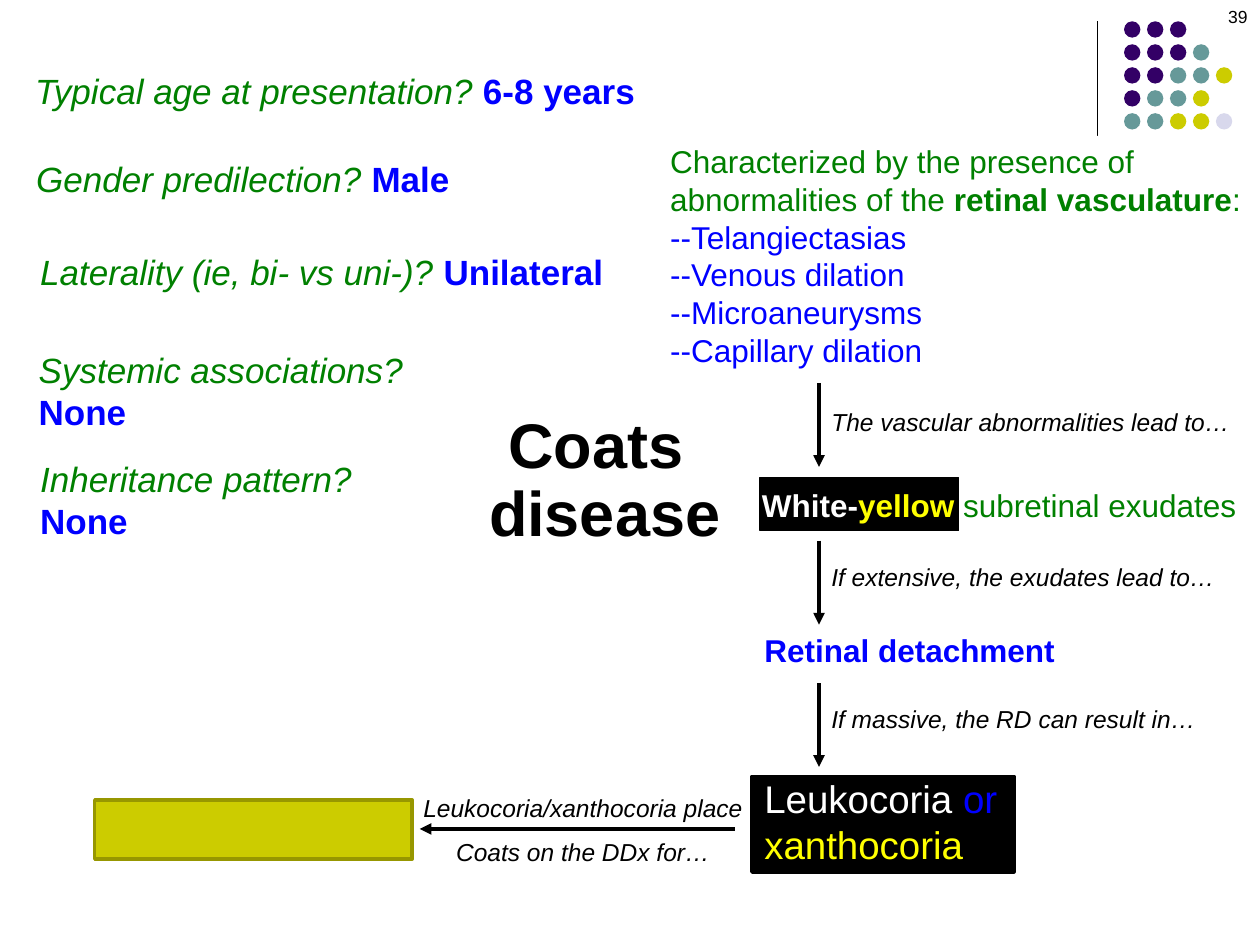
from dataclasses import dataclass

from lxml import etree
from pptx import Presentation
from pptx import util as u
from pptx.dml.color import RGBColor
from pptx.enum import shapes, text
from pptx.oxml.ns import qn

BLACK, WHITE, GREEN, BLUE = "000000", "FFFFFF", "008000", "0000FF"
YELLOW, OLIVE, TEAL, PURPLE, LILAC = "FFFF00", "CCCC00", "669999", "330066", "D8D8EC"


@dataclass
class Box:
    """Left, top, width and height in centimetres."""
    left: float
    top: float
    width: float
    height: float

    def lengths(self) -> tuple:
        return tuple(u.Cm(v) for v in (self.left, self.top, self.width, self.height))


@dataclass
class Span:
    words: str
    color: str = BLACK
    bold: bool = False
    italic: bool = False


@dataclass
class Question:
    box: Box
    prompt: str
    answer: str
    two_lines: bool = False


@dataclass
class Step:
    """A downward arrow with a caption to its right."""
    arrow_top: float
    caption_box: Box
    caption: str
    wrap: bool = True


DOT_ROWS = [
    [PURPLE] * 3,
    [PURPLE] * 3 + [TEAL],
    [PURPLE] * 2 + [TEAL] * 2 + [OLIVE],
    [PURPLE] + [TEAL] * 2 + [OLIVE],
    [TEAL] * 2 + [OLIVE] * 2 + [LILAC],
]
DOT_PITCH, DOT_SIZE = 0.463, 0.33

QUESTIONS = [
    Question(Box(0.46, 1.27, 12.7, 1.12), "Typical age at presentation? ", "6-8 years"),
    Question(Box(0.48, 3.05, 8.89, 1.12), "Gender predilection? ", "Male"),
    Question(Box(0.56, 4.93, 11.94, 1.12), "Laterality (ie, bi- vs uni-)? ", "Unilateral"),
    Question(Box(0.53, 6.91, 9.8, 1.09), "Systemic associations? ", "None", True),
    Question(Box(0.56, 9.09, 8.74, 1.09), "Inheritance pattern? ", "None", True),
]

ARROW_X, ARROW_LENGTH = 16.51, 1.69
STEPS = [
    Step(7.72, Box(ARROW_X, 8.08, 8.59, 0.86), "The vascular abnormalities lead to…", False),
    Step(10.9, Box(ARROW_X, 11.2, 8.59, 0.86), "If extensive, the exudates lead to…"),
    Step(13.77, Box(ARROW_X, 14.07, 8.0, 0.86), "If massive, the RD can result in…"),
]

FINDINGS = [
    [Span("Characterized by the presence of", GREEN)],
    [Span("abnormalities of the ", GREEN), Span("retinal vasculature", GREEN, bold=True),
     Span(":", GREEN)],
    *[[Span(f"--{name}", BLUE)] for name in
      ("Telangiectasias", "Venous dilation", "Microaneurysms", "Capillary dilation")],
]


def rgb(color: str) -> RGBColor:
    return RGBColor.from_string(color)


def add_block(page, kind, box: Box, fill: str, line: str = "", width: float = 0):
    block = page.shapes.add_shape(kind, *box.lengths())
    block.shadow.inherit = False
    block.fill.solid()
    block.fill.fore_color.rgb = rgb(fill)
    if line:
        block.line.color.rgb = rgb(line)
        block.line.width = u.Pt(width)
    else:
        block.line.fill.background()
    return block


def add_line(page, start: tuple, end: tuple, width: float, arrow: bool = False) -> None:
    line = page.shapes.add_connector(
        shapes.MSO_CONNECTOR.STRAIGHT, *(u.Cm(v) for v in (*start, *end)))
    line.line.color.rgb = rgb(BLACK)
    line.line.width = u.Pt(width)
    if arrow:
        etree.SubElement(line.line._get_or_add_ln(), qn("a:tailEnd"), type="triangle")
    etree.SubElement(line._element.spPr, qn("a:effectLst"))


def write(holder, paragraphs: list[list[Span]], *, size: float, wrap: bool = True,
          align=text.PP_ALIGN.LEFT, spacing: float = 1.0, grow: bool = True) -> None:
    """Fill a shape with paragraphs; a span of "\\n" is a line break."""
    frame = holder.text_frame
    frame.word_wrap = wrap
    frame.vertical_anchor = text.MSO_ANCHOR.TOP
    if grow:
        frame.auto_size = text.MSO_AUTO_SIZE.SHAPE_TO_FIT_TEXT
    for index, spans in enumerate(paragraphs):
        para = frame.add_paragraph() if index else frame.paragraphs[0]
        para.alignment = align
        para.line_spacing = spacing
        for span in spans:
            if span.words == "\n":
                para.add_line_break()
                continue
            run = para.add_run()
            run.text = span.words
            run.font.name = "Arial"
            run.font.size = u.Pt(size)
            run.font.bold = span.bold
            run.font.italic = span.italic
            run.font.color.rgb = rgb(span.color)


def add_text(page, box: Box, *paragraphs: list[Span], **formatting) -> None:
    write(page.shapes.add_textbox(*box.lengths()), list(paragraphs), **formatting)


def draw_corner(page) -> None:
    add_line(page, (22.12, 0.43), (22.12, 4.65), 0.75)
    for row, colors in enumerate(DOT_ROWS):
        for column, color in enumerate(colors):
            spot = Box(22.66 + column * DOT_PITCH, 0.43 + row * DOT_PITCH, DOT_SIZE, DOT_SIZE)
            add_block(page, shapes.MSO_SHAPE.OVAL, spot, color)
    add_text(page, Box(19.48, 0, 5.92, 1.27), [Span("39")], size=10,
             align=text.PP_ALIGN.RIGHT, grow=False)


def draw_questions(page) -> None:
    for item in QUESTIONS:
        gap = [Span("\n")] if item.two_lines else []
        spans = [Span(item.prompt, GREEN, italic=True), *gap, Span(item.answer, BLUE, bold=True)]
        add_text(page, item.box, spans, size=20, wrap=item.two_lines)
    add_text(page, Box(9.55, 8.23, 5.28, 3.1), [Span("Coats ", bold=True)],
             [Span("disease", bold=True)], size=36, wrap=False,
             align=text.PP_ALIGN.CENTER, spacing=0.9)


def draw_pathway(page) -> None:
    rectangle = shapes.MSO_SHAPE.RECTANGLE
    findings = add_block(page, rectangle, Box(13.26, 2.74, 12.04, 4.88), WHITE)
    write(findings, FINDINGS, size=18)

    for step in STEPS:
        add_line(page, (ARROW_X, step.arrow_top), (ARROW_X, step.arrow_top + ARROW_LENGTH),
                 2.25, arrow=True)
        add_text(page, step.caption_box, [Span(step.caption, italic=True)],
                 size=14, wrap=step.wrap)

    add_block(page, rectangle, Box(15.32, 9.63, 4.01, 1.07), BLACK, BLACK, 0.75)
    add_text(page, Box(15.11, 9.68, 10.08, 1.02),
             [Span("White-", WHITE, bold=True), Span("yellow ", YELLOW, bold=True),
              Span("subretinal exudates", GREEN)], size=18, wrap=False)
    add_text(page, Box(15.16, 12.6, 6.43, 1.02),
             [Span("Retinal detachment", BLUE, bold=True)], size=18, wrap=False)
    add_block(page, rectangle, Box(15.16, 15.65, 5.28, 1.93), BLACK, BLACK, 2)
    add_text(page, Box(15.16, 15.49, 5.28, 2.13),
             [Span("Leukocoria ", WHITE), Span("or ", BLUE), Span("xanthocoria", YELLOW)],
             size=22)

    add_text(page, Box(8.2, 15.57, 7.11, 1.93),
             [Span("Leukocoria/xanthocoria place Coats on the DDx for…", italic=True)],
             size=14, align=text.PP_ALIGN.CENTER, spacing=1.5)
    add_line(page, (14.81, 16.71), (8.46, 16.71), 2.25, arrow=True)
    add_block(page, rectangle, Box(1.91, 16.13, 6.4, 1.19), OLIVE, "979700", 2)


def main() -> None:
    deck = Presentation()
    deck.slide_width, deck.slide_height = u.Cm(25.4), u.Cm(19.05)
    page = deck.slides.add_slide(deck.slide_layouts[6])
    draw_corner(page)
    draw_questions(page)
    draw_pathway(page)
    deck.save("out.pptx")


if __name__ == "__main__":
    main()
